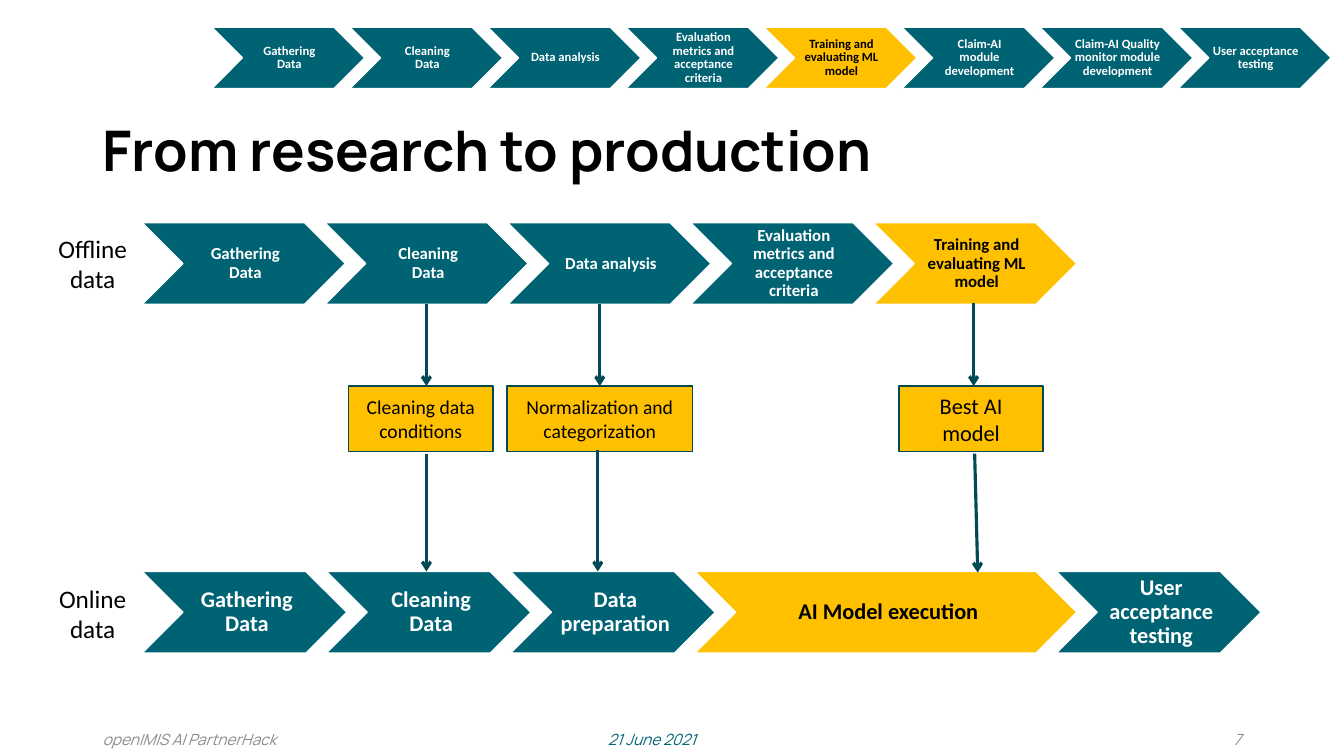
"""Builds the slide that maps the research pipeline onto the production pipeline."""
from lxml.etree import SubElement
from pptx import Presentation
from pptx.dml.color import RGBColor
from pptx.enum.shapes import MSO_CONNECTOR, MSO_SHAPE
from pptx.enum.text import MSO_ANCHOR, MSO_AUTO_SIZE, PP_ALIGN
from pptx.oxml.ns import qn
from pptx.util import Pt

TEAL = RGBColor(0x00, 0x63, 0x74)
DARK_TEAL = RGBColor(0x00, 0x49, 0x56)
AMBER = RGBColor(0xFF, 0xC0, 0x00)
GREY = RGBColor(0x8C, 0x8C, 0x8C)
BLACK = RGBColor(0x00, 0x00, 0x00)
WHITE = RGBColor(0xFF, 0xFF, 0xFF)

RESEARCH_STEPS = [
    "Gathering\vData",
    "Cleaning\vData",
    "Data analysis",
    "Evaluation metrics and acceptance criteria",
    "Training and evaluating ML model",
]
PROJECT_STEPS = RESEARCH_STEPS + [
    "Claim-AI module development",
    "Claim-AI Quality monitor module development",
    "User acceptance testing",
]
PRODUCTION_STEPS = [
    "Gathering\vData",
    "Cleaning\vData",
    "Data preparation",
    "AI Model execution",
    "User acceptance testing",
]
RESULTS = [
    ("Cleaning data conditions", 249.1, 103, 14),
    ("Normalization and categorization", 362.2, 132.5, 14),
    ("Best AI model", 642.2, 103, 16),
]
ARROWS = [
    (304.6, 217.4, 304.6, 275.8),
    (304.6, 324, 304.6, 408.2),
    (428.4, 217.4, 428.4, 275.8),
    (427, 321.1, 427, 408.2),
    (695.5, 216.7, 695.5, 275.8),
    (696.2, 324, 698.4, 409),
]


def write(frame, text, size, color, align=PP_ALIGN.CENTER, font="Calibri",
          bold=False, italic=False, spacing=1.0):
    """Put one formatted paragraph into a text frame, centred vertically."""
    frame.text = text
    frame.word_wrap = True
    frame.auto_size = MSO_AUTO_SIZE.NONE
    frame.vertical_anchor = MSO_ANCHOR.MIDDLE
    para = frame.paragraphs[0]
    para.alignment = align
    para.line_spacing = spacing
    for span in para.runs:
        span.font.name = font
        span.font.size = Pt(size)
        span.font.bold = bold
        span.font.italic = italic
        span.font.color.rgb = color


def set_margins(frame, left, right, vertical):
    """Set the inner margins of a text frame in points."""
    frame.margin_left, frame.margin_right = Pt(left), Pt(right)
    frame.margin_top = frame.margin_bottom = Pt(vertical)


def add_title(page, text):
    """Move, fill and format the title placeholder."""
    title = page.shapes.title
    title.left, title.top, title.width, title.height = Pt(66.2), Pt(72.7), Pt(828), Pt(74.2)
    write(title.text_frame, text, 40, BLACK, PP_ALIGN.LEFT, "Manrope", bold=True, spacing=0.9)


def add_filled_shape(page, kind, left, top, width, height, fill, line):
    """Add a flat shape with a one-point outline."""
    shape = page.shapes.add_shape(kind, Pt(left), Pt(top), Pt(width), Pt(height))
    shape.shadow.inherit = False
    shape.fill.solid()
    shape.fill.fore_color.rgb = fill
    shape.line.color.rgb = line
    shape.line.width = Pt(1)
    return shape


def add_process(page, steps, highlight, left, top, width, height, overlap, size, wide=None):
    """Add a row of chevrons; the highlighted one may have its own width."""
    for step in steps:
        active = step == highlight
        step_width = wide if active and wide else width
        chevron = add_filled_shape(page, MSO_SHAPE.CHEVRON, left, top, step_width, height,
                                   AMBER if active else TEAL, WHITE)
        set_margins(chevron.text_frame, size * 0.3, 1.2, 1.2)
        write(chevron.text_frame, step, size, BLACK if active else WHITE,
              bold=True, spacing=0.9)
        left += step_width - overlap


def add_result(page, text, left, width, size):
    """Add a box for what research hands over to production."""
    box = add_filled_shape(page, MSO_SHAPE.RECTANGLE, left, 275.8, width, 46.8,
                           AMBER, DARK_TEAL)
    set_margins(box.text_frame, 10, 10, 3.6)
    write(box.text_frame, text, size, BLACK)


def add_arrow(page, start_x, start_y, end_x, end_y):
    """Add a straight arrow without a shadow."""
    arrow = page.shapes.add_connector(MSO_CONNECTOR.STRAIGHT, Pt(start_x), Pt(start_y),
                                      Pt(end_x), Pt(end_y))
    arrow.line.color.rgb = DARK_TEAL
    arrow.line.width = Pt(2.25)
    SubElement(arrow.line._get_or_add_ln(), qn("a:tailEnd"), type="arrow")
    SubElement(arrow._element.spPr, qn("a:effectLst"))


def add_row_label(page, text, top):
    """Name a row of the diagram at its left."""
    box = page.shapes.add_textbox(Pt(22.3), Pt(top), Pt(87.8), Pt(41))
    write(box.text_frame, text, 18, BLACK)


def add_footer(page, text, left, width, color, align):
    """Add one part of the footer line."""
    box = page.shapes.add_textbox(Pt(left), Pt(513.4), Pt(width), Pt(28.8))
    write(box.text_frame, text, 11, color, align, "Manrope", italic=True)


def main():
    """Build and save the deck."""
    deck = Presentation()
    deck.slide_width, deck.slide_height = Pt(960), Pt(540)
    page = deck.slides.add_slide(deck.slide_layouts[5])
    training = RESEARCH_STEPS[-1]

    add_title(page, "From research to production")
    add_process(page, PROJECT_STEPS, training, 151.2, 19.4, 109.4, 43.9, 10.8, 9)
    add_row_label(page, "Offline data", 167.8)
    add_process(page, RESEARCH_STEPS, training, 101.5, 159.1, 145.2, 58.3, 14.6, 12)
    add_row_label(page, "Online data", 417.6)
    add_process(page, PRODUCTION_STEPS, "AI Model execution",
                101.5, 408.2, 146.2, 58.3, 14.6, 16, wide=272.9)
    for result in RESULTS:
        add_result(page, *result)
    for arrow in ARROWS:
        add_arrow(page, *arrow)

    add_footer(page, "openIMIS AI PartnerHack", 66.2, 324, GREY, PP_ALIGN.LEFT)
    add_footer(page, "21 June 2021", 357.8, 216, TEAL, PP_ALIGN.CENTER)
    add_footer(page, "7", 758.2, 135.4, GREY, PP_ALIGN.RIGHT)
    deck.save("out.pptx")


if __name__ == "__main__":
    main()
